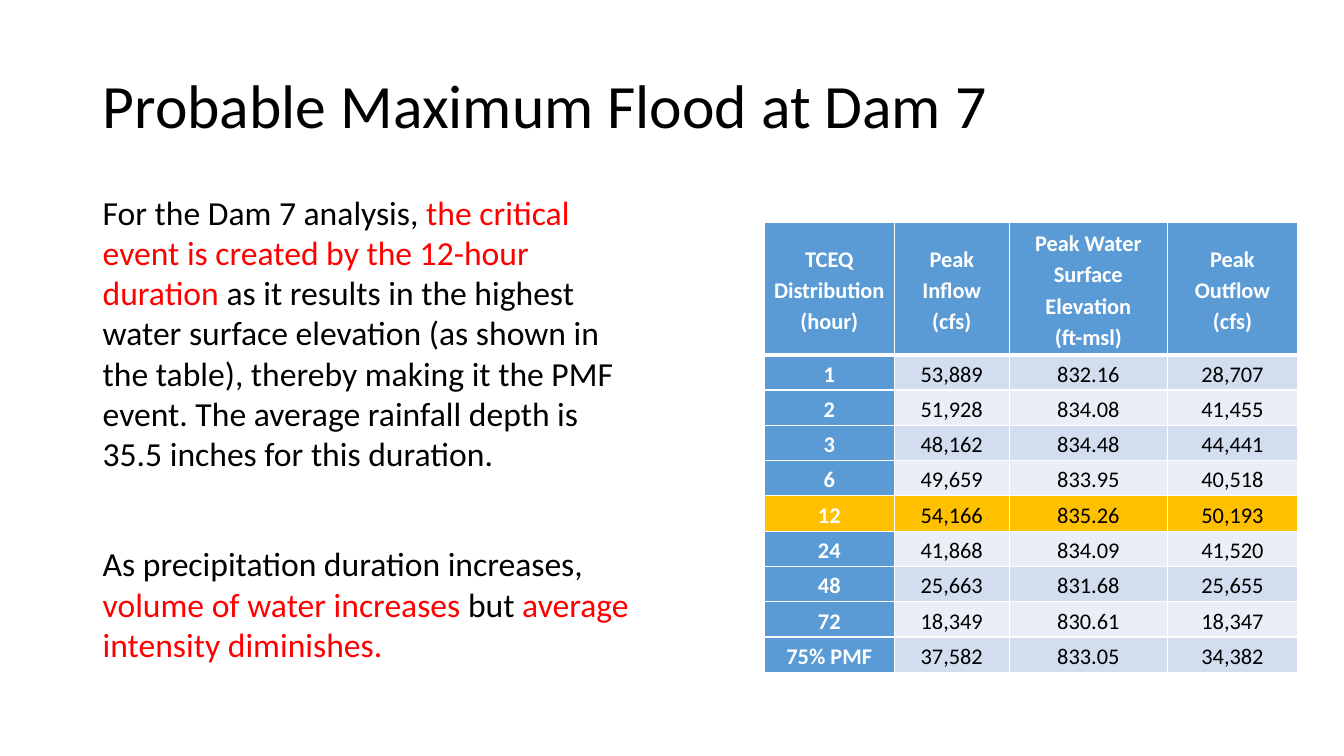
from lxml import etree
from pptx import Presentation
from pptx.dml.color import RGBColor
from pptx.enum import text
from pptx.oxml.ns import qn
from pptx.util import Inches, Pt

# Content
TITLE = "Probable Maximum Flood at Dam 7"

# Each note: (left, top, width, height), then (wording, colour name) spans
NOTES = [
    ((0.92, 1.85, 5.45, 2.93), [
        ("For the Dam 7 analysis, ", "ink"),
        ("the critical event is created by the 12-hour duration ", "accent"),
        ("as it results in the highest water surface elevation (as shown in "
         "the table), thereby making it the PMF event. The average rainfall "
         "depth is 35.5 inches for this duration.", "ink"),
    ]),
    ((0.92, 5.34, 5.68, 1.31), [
        ("As precipitation duration increases, ", "ink"),
        ("volume of water increases", "accent"),
        (" but ", "ink"),
        ("average intensity diminishes.", "accent"),
    ]),
]

HEADERS = ["TCEQ Distribution\n(hour)", "Peak Inflow\n(cfs)",
           "Peak Water Surface Elevation\n(ft-msl)", "Peak Outflow\n(cfs)"]
FLOODS = [
    ("1", "53,889", "832.16", "28,707"),
    ("2", "51,928", "834.08", "41,455"),
    ("3", "48,162", "834.48", "44,441"),
    ("6", "49,659", "833.95", "40,518"),
    ("12", "54,166", "835.26", "50,193"),
    ("24", "41,868", "834.09", "41,520"),
    ("48", "25,663", "831.68", "25,655"),
    ("72", "18,349", "830.61", "18,347"),
    ("75% PMF", "37,582", "833.05", "34,382"),
]
CRITICAL = "12"

# Theme and table measures
THEME = {
    "font": "Calibri", "title": 44, "body": 24, "cell": 16,
    "ink": "000000", "accent": "FF0000", "white": "FFFFFF",
    "header": "5B9BD5", "critical": "FFC000", "bands": ("D2DEEF", "EAEFF7"),
}
TABLE_AT = (7.58, 2.21)
COLUMNS = [1.29, 1.14, 1.57, 1.29]
HEADER_HEIGHT, ROW_HEIGHT = 1.31, 0.35


def style(font, size, color, bold=False):
    font.name, font.size, font.bold = THEME["font"], Pt(size), bold
    font.color.rgb = RGBColor.from_string(color)


def add_border(cell, side, points):
    line = etree.SubElement(cell._tc.get_or_add_tcPr(), qn(f"a:ln{side}"),
                            w=str(Pt(points)))
    fill = etree.SubElement(line, qn("a:solidFill"))
    etree.SubElement(fill, qn("a:srgbClr"), val=THEME["white"])


def fill_color(row, col):
    if row and FLOODS[row - 1][0] == CRITICAL:
        return THEME["critical"]
    if row == 0 or col == 0:
        return THEME["header"]
    return THEME["bands"][(row - 1) % 2]


def format_cell(cell, wording, row, col):
    cell.text = wording
    cell.vertical_anchor = text.MSO_ANCHOR.MIDDLE
    cell.margin_left = cell.margin_right = Inches(0.07)
    cell.margin_top = cell.margin_bottom = 0
    heading = row == 0 or col == 0
    for para in cell.text_frame.paragraphs:
        para.alignment = text.PP_ALIGN.CENTER
        para.line_spacing = 1.15
        style(para.font, THEME["cell"],
              THEME["white" if heading else "ink"], heading)
    # Borders come before the fill; a thick rule parts header from data
    for side in "LRTB":
        below_header = (row, side) in ((0, "B"), (1, "T"))
        add_border(cell, side, 3 if below_header else 1)
    cell.fill.solid()
    cell.fill.fore_color.rgb = RGBColor.from_string(fill_color(row, col))


def add_title(page):
    title = page.shapes.title
    title.left, title.top, title.width, title.height = map(
        Inches, (0.92, 0.35, 11.5, 1.45))
    title.text = TITLE
    title.text_frame.auto_size = text.MSO_AUTO_SIZE.NONE
    title.text_frame.vertical_anchor = text.MSO_ANCHOR.MIDDLE
    para = title.text_frame.paragraphs[0]
    para.alignment = text.PP_ALIGN.LEFT
    para.line_spacing = 0.9
    style(para.font, THEME["title"], THEME["ink"])


def add_note(page, place, spans):
    box = page.shapes.add_textbox(*map(Inches, place))
    box.text_frame.word_wrap = True
    box.text_frame.auto_size = text.MSO_AUTO_SIZE.SHAPE_TO_FIT_TEXT
    para = box.text_frame.paragraphs[0]
    style(para.font, THEME["body"], THEME["ink"])
    for wording, color in spans:
        span = para.add_run()
        span.text = wording
        span.font.color.rgb = RGBColor.from_string(THEME[color])


def add_flood_table(page):
    rows = [HEADERS, *FLOODS]
    height = HEADER_HEIGHT + ROW_HEIGHT * len(FLOODS)
    size = (*TABLE_AT, sum(COLUMNS), height)
    table = page.shapes.add_table(len(rows), len(COLUMNS),
                                  *map(Inches, size)).table
    table.first_col = True
    for column, width in zip(table.columns, COLUMNS):
        column.width = Inches(width)
    for r, values in enumerate(rows):
        table.rows[r].height = Inches(ROW_HEIGHT if r else HEADER_HEIGHT)
        for c, wording in enumerate(values):
            format_cell(table.cell(r, c), wording, r, c)


def main():
    deck = Presentation()
    deck.slide_width, deck.slide_height = Inches(13.33), Inches(7.5)
    page = deck.slides.add_slide(deck.slide_layouts.get_by_name("Title Only"))
    add_title(page)
    for place, spans in NOTES:
        add_note(page, place, spans)
    add_flood_table(page)
    deck.save("out.pptx")


if __name__ == "__main__":
    main()
